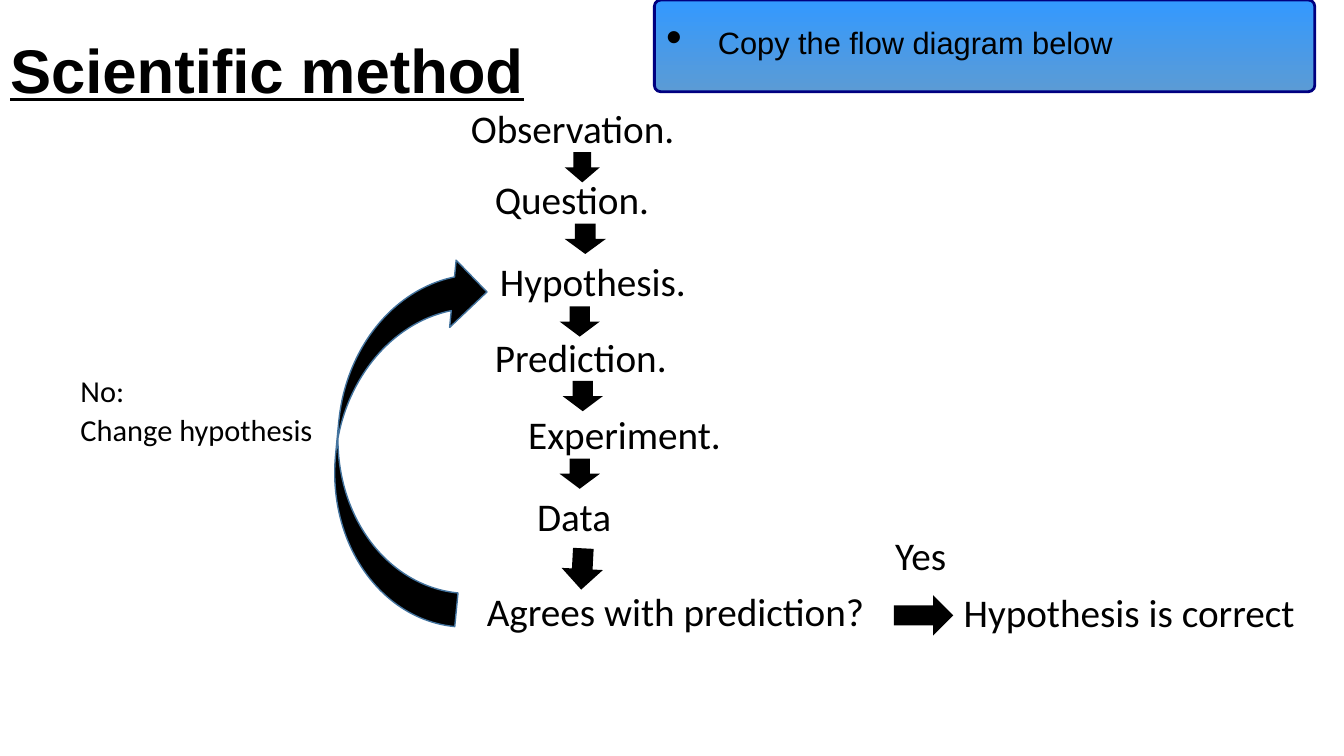
from pptx import Presentation, util as u
from pptx.dml.color import RGBColor
from pptx.enum import shapes, text
from pptx.oxml.ns import qn
from lxml import etree

WIDTH, HEIGHT = 13.33, 7.5
TITLE = "Scientific method"
TASK = "Copy the flow diagram below"
BOX_WIDTH, BOX_HEIGHT = 8.47, 0.77
STEPS = [
    ("Observation.", 4.57, 1.04),
    ("Question.", 4.81, 1.74),
    ("Hypothesis.", 4.86, 2.56),
    ("Prediction.", 4.81, 3.31),
    ("Experiment.", 5.14, 4.07),
    ("Data", 5.23, 4.89),
    ("Agrees with prediction?", 4.73, 5.83),
    ("Yes", 8.78, 5.27),
    ("Hypothesis is correct", 9.46, 5.84),
]
RETRY = (["No:", "Change hypothesis"], 0.7, 3.74)
ARROWS = [
    (5.6, 1.51, 0.35, 0.3, 0),
    (5.6, 2.22, 0.41, 0.3, 0),
    (5.55, 3.04, 0.4, 0.3, 0),
    (5.58, 3.78, 0.4, 0.3, 0),
    (5.55, 4.55, 0.4, 0.3, 0),
    (5.57, 5.44, 0.41, 0.41, 3),
    (8.96, 5.81, 0.4, 0.59, 270),
]
LOOP = (3.35, 2.49, 1.34, 3.67, 185.5)
BLACK = "000000"


def color(value):
    return RGBColor.from_string(value)


def place(shape, *lengths):
    shape.left, shape.top, shape.width, shape.height = map(u.Inches, lengths)


def write(para, words, font="Calibri", size=28, bold=False, underline=False):
    span = para.add_run()
    span.text = words
    span.font.name = font
    span.font.size = u.Pt(size)
    span.font.bold = bold
    span.font.underline = underline
    span.font.color.rgb = color(BLACK)


def set_bullet(para, mark=None, hang=0):
    props = para._p.get_or_add_pPr()
    props.set("marL", str(u.Inches(hang)))
    props.set("indent", str(-u.Inches(hang)))
    if mark:
        etree.SubElement(props, qn("a:buFont")).set("typeface", "Arial")
        etree.SubElement(props, qn("a:buChar")).set("char", mark)
    else:
        etree.SubElement(props, qn("a:buNone"))


def fill_box(box, lines, left, top, size=28, spacing=0.9):
    place(box, left, top, min(BOX_WIDTH, WIDTH - left), BOX_HEIGHT)
    frame = box.text_frame
    frame.word_wrap = True
    frame.auto_size = text.MSO_AUTO_SIZE.NONE
    for index, line in enumerate(lines):
        para = frame.add_paragraph() if index else frame.paragraphs[0]
        para.line_spacing = spacing
        para.space_before = u.Pt(10)
        set_bullet(para)
        write(para, line, size=size)


def add_block(page, kind, left, top, width, height, turn=0):
    block = page.shapes.add_shape(kind, *map(u.Inches, (left, top, width, height)))
    block.shadow.inherit = False
    block.rotation = turn
    block.fill.solid()
    block.fill.fore_color.rgb = color(BLACK)
    block.line.fill.background()
    return block


def outline(block, value, points):
    block.line.color.rgb = color(value)
    block.line.width = u.Pt(points)


def add_title(page):
    title = page.shapes.title
    place(title, 0, 0, 11.5, 1.45)
    frame = title.text_frame
    frame.auto_size = text.MSO_AUTO_SIZE.NONE
    frame.vertical_anchor = text.MSO_ANCHOR.MIDDLE
    para = frame.paragraphs[0]
    para.alignment = text.PP_ALIGN.LEFT
    para.line_spacing = 0.9
    write(para, TITLE, font="Arial", size=44, bold=True, underline=True)


def add_task(page):
    banner = add_block(page, shapes.MSO_SHAPE.ROUNDED_RECTANGLE, 6.49, 0, 6.55, 0.91)
    banner.adjustments[0] = 0.069
    banner.fill.gradient()
    banner.fill.gradient_angle = 270
    for stop, value in zip(banner.fill.gradient_stops, ("3399FF", "5B9BD5")):
        stop.color.rgb = color(value)
    outline(banner, "000080", 2)
    frame = banner.text_frame
    frame.vertical_anchor = text.MSO_ANCHOR.TOP
    frame.margin_top = u.Inches(0.08)
    para = frame.paragraphs[0]
    para.alignment = text.PP_ALIGN.LEFT
    set_bullet(para, "•", 0.39)
    write(para, " ", font="Arial", size=32, bold=True)
    write(para, TASK, font="Arial", size=22)


def main():
    deck = Presentation()
    deck.slide_width, deck.slide_height = u.Inches(WIDTH), u.Inches(HEIGHT)
    page = deck.slides.add_slide(deck.slide_layouts[1])
    add_task(page)
    add_title(page)
    for index, (label, left, top) in enumerate(STEPS):
        box = page.shapes.add_textbox(0, 0, 0, 0) if index else page.placeholders[1]
        fill_box(box, [label], left, top)
    for arrow in ARROWS:
        add_block(page, shapes.MSO_SHAPE.DOWN_ARROW, *arrow)
    loop = add_block(page, shapes.MSO_SHAPE.CURVED_RIGHT_ARROW, *LOOP)
    loop._element.spPr.find(qn("a:xfrm")).set("flipH", "1")
    outline(loop, "43739E", 1)
    fill_box(page.shapes.add_textbox(0, 0, 0, 0), *RETRY, size=21.7, spacing=0.7)
    deck.save("out.pptx")


if __name__ == "__main__":
    main()
